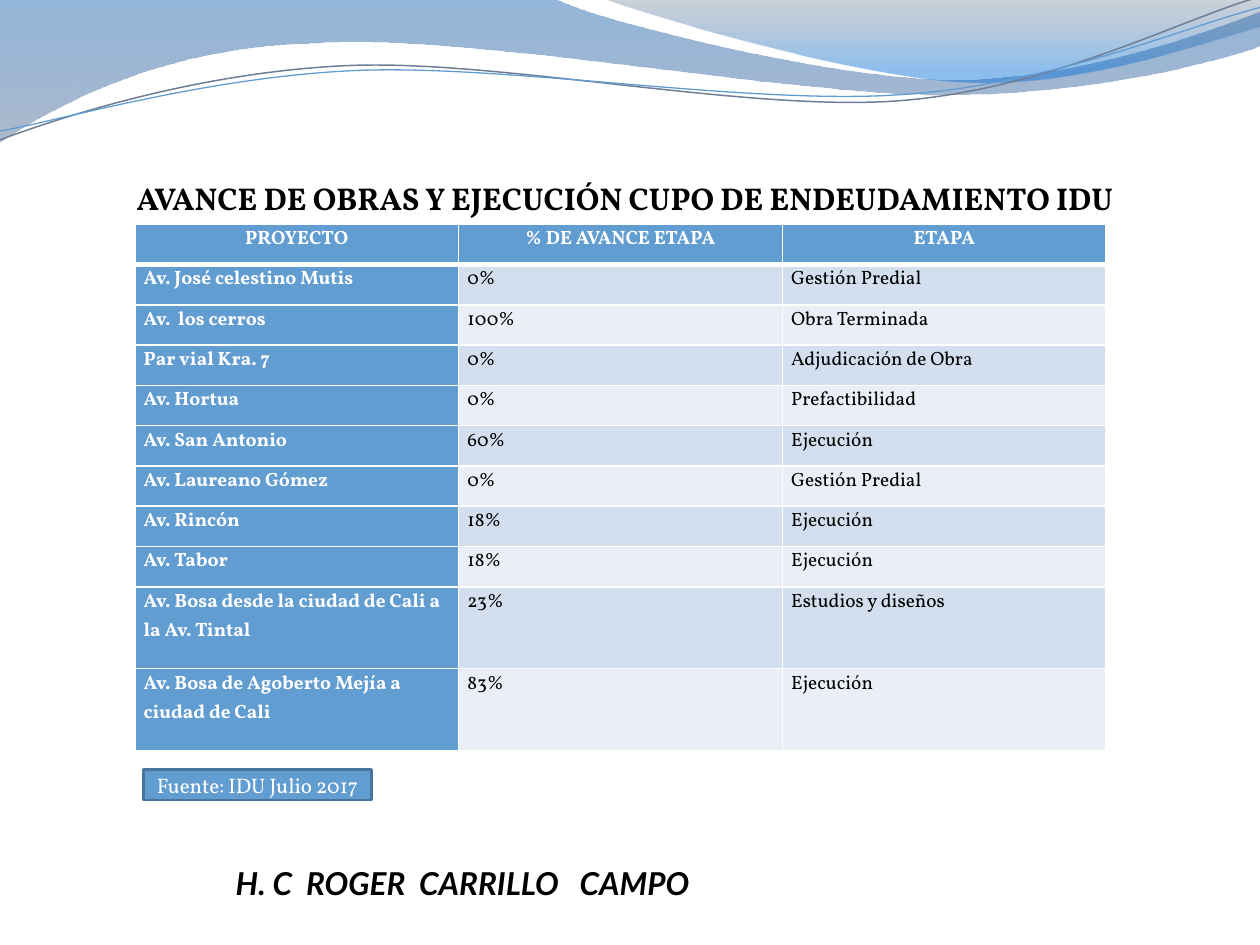
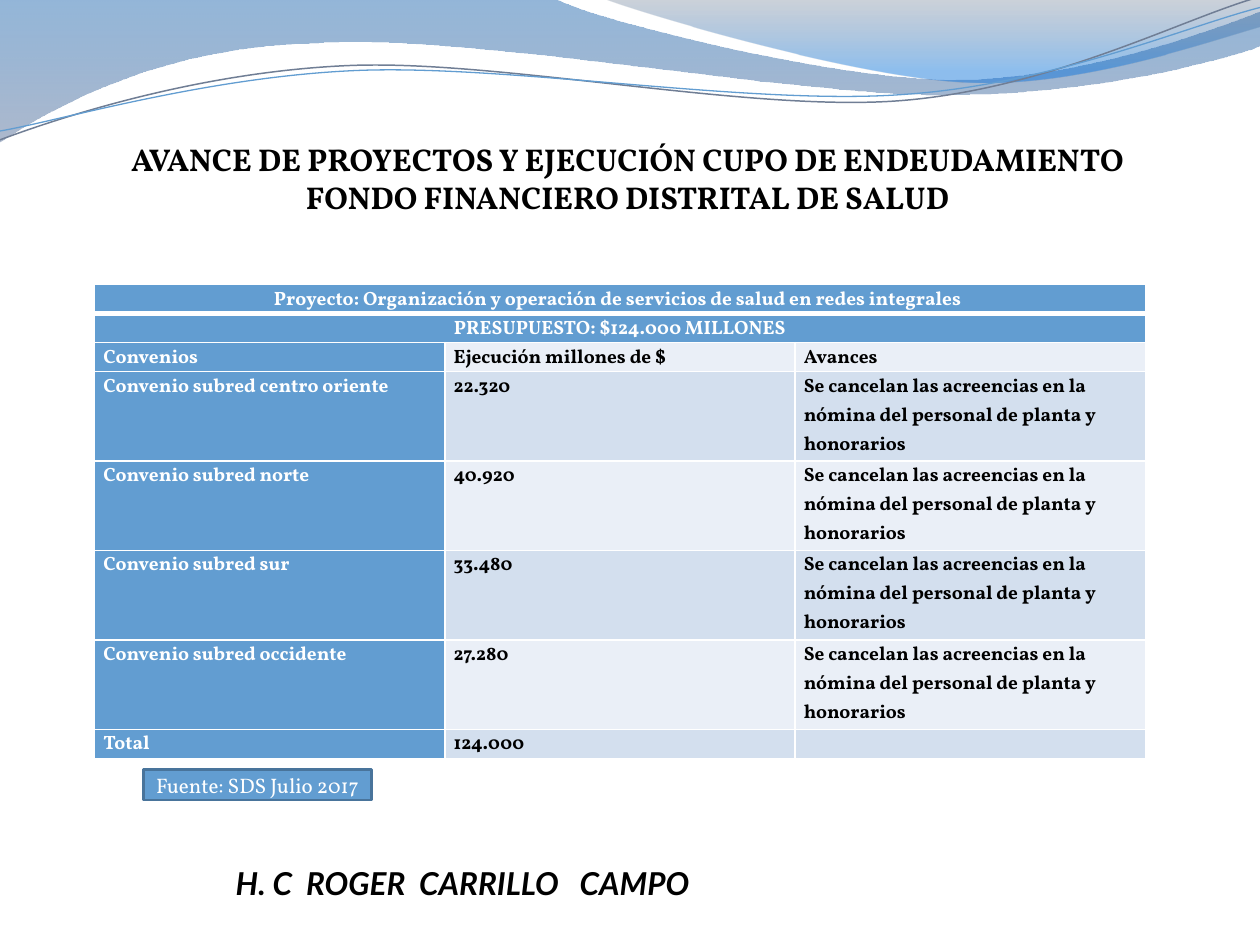
from dataclasses import dataclass
from math import cos, radians, sin

from lxml.etree import SubElement
from pptx import Presentation
from pptx.dml.color import RGBColor
from pptx.enum.shapes import MSO_SHAPE
from pptx.enum.text import MSO_ANCHOR, MSO_AUTO_SIZE, PP_ALIGN
from pptx.oxml.ns import qn
from pptx.util import Inches, Pt

COLORS = {
    "white": "FFFFFF",
    "black": "000000",
    "accent": "629DD1",
    "accent_dark": "49749B",
    "band_odd": "D3DFEE",
    "band_even": "EAEFF7",
    "wave_deep": "125EAA",
    "wave_grey": "697FA4",
    "crest_slate": "596982",
    "crest_blue": "0670DA",
    "thread_grey": "707E95",
}
SERIF = "Vollkorn"
SANS = "Lato"
AUTHOR = " H. C  ROGER  CARRILLO   CAMPO"
PAYMENT = "Se cancelan las acreencias en la nómina del personal de planta y honorarios"


@dataclass(frozen=True)
class Stop:
    position: float
    color: str
    alpha: int


@dataclass(frozen=True)
class Wave:
    start: tuple
    segments: list
    stops: tuple = ()
    line: str = ""
    width: float = 0
    tilt: float = 0
    pivot: tuple = (0, 0)


@dataclass(frozen=True)
class Report:
    title: str
    title_box: tuple
    table_place: tuple
    column_width: float
    row_heights: list
    rows: list
    source: str
    banner_rows: int = 0
    bold_body: bool = False


WAVES = [
    Wave(
        (0, 0),
        [(4.4, -0.01), (4.76, 0.17, 6.64, 0.63, 7.58, 0.63),
         (8.53, 0.63, 9.58, 0.26, 10, 0.09), (10.01, 0.36),
         (9.83, 0.44, 8.7, 0.76, 7.46, 0.75),
         (6.22, 0.75, 3.82, 0.28, 2.57, 0.34),
         (1.29, 0.36, 0.46, 0.83, -0.01, 1.13), (0, 0)],
        stops=(Stop(0, "wave_deep", 45), Stop(1, "wave_grey", 55)),
    ),
    Wave(
        (4.79, -0.01),
        [(5.09, 0.11, 6.82, 0.62, 7.69, 0.65),
         (8.56, 0.69, 9.61, 0.32, 10, 0.21), (10, 0), (4.79, -0.01)],
        stops=(Stop(0, "crest_slate", 30), Stop(0.8, "crest_blue", 45)),
    ),
    Wave(
        (0, 1.11),
        [(0.48, 0.93, 1.58, 0.57, 2.77, 0.52),
         (3.95, 0.47, 5.93, 0.89, 7.13, 0.8),
         (8.33, 0.71, 9.38, 0.15, 9.98, -0.02)],
        line="thread_grey", width=0.85, tilt=-2.7, pivot=(4.99, 0.58),
    ),
    Wave(
        (0, 1.04),
        [(0.47, 0.96, 1.64, 0.61, 2.83, 0.56),
         (4.03, 0.51, 5.97, 0.84, 7.17, 0.75),
         (8.36, 0.67, 9.41, 0.21, 10, 0.06)],
        line="accent", width=0.75, tilt=-2.7, pivot=(5, 0.59),
    ),
]

REPORTS = [
    Report(
        title="AVANCE DE OBRAS Y EJECUCIÓN CUPO DE ENDEUDAMIENTO IDU",
        title_box=(0.43, 1.37, 9.06, 0.41),
        table_place=(1.07, 1.78),
        column_width=2.57,
        row_heights=[0.32] * 9 + [0.65] * 2,
        rows=[
            ("PROYECTO", "% DE AVANCE ETAPA", "ETAPA"),
            ("Av. José celestino Mutis", "0%", "Gestión Predial"),
            ("Av.  los cerros", "100%", "Obra Terminada"),
            ("Par vial Kra. 7", "0%", "Adjudicación de Obra"),
            ("Av. Hortua", "0%", "Prefactibilidad"),
            ("Av. San Antonio", "60%", "Ejecución"),
            ("Av. Laureano Gómez", "0%", "Gestión Predial"),
            ("Av. Rincón", "18%", "Ejecución"),
            ("Av. Tabor", "18%", "Ejecución"),
            ("Av. Bosa desde la ciudad de Cali a la Av. Tintal", "23%", "Estudios y diseños"),
            ("Av. Bosa de Agoberto Mejía a ciudad de Cali", "83%", "Ejecución"),
        ],
        source="Fuente: IDU Julio 2017",
    ),
    Report(
        title="AVANCE DE PROYECTOS Y EJECUCIÓN CUPO DE ENDEUDAMIENTO "
              "FONDO FINANCIERO DISTRITAL DE SALUD",
        title_box=(0.57, 1.06, 8.82, 0.71),
        table_place=(0.75, 2.26),
        column_width=2.78,
        row_heights=[0.23] * 3 + [0.71] * 4 + [0.23],
        rows=[
            ("Proyecto: Organización y operación de servicios de salud en redes integrales ", "", ""),
            ("PRESUPUESTO: $124.000 MILLONES", "", ""),
            ("Convenios", "Ejecución millones de $", "Avances"),
            ("Convenio subred centro oriente", "22.320", PAYMENT),
            ("Convenio subred norte", "40.920", PAYMENT),
            ("Convenio subred sur", "33.480", PAYMENT),
            ("Convenio subred occidente", "27.280", PAYMENT),
            ("Total", "124.000", ""),
        ],
        source="Fuente: SDS Julio 2017",
        banner_rows=2,
        bold_body=True,
    ),
]


def rgb(name: str) -> RGBColor:
    return RGBColor.from_string(COLORS[name])


def box(lengths: tuple) -> list:
    return [Inches(length) for length in lengths]


def write(frame, text: str, *, size: float, font: str = SERIF, color: str = "black",
          bold: bool = False, italic: bool = False, align=PP_ALIGN.CENTER,
          spacing: float = 1.0) -> None:
    paragraph = frame.paragraphs[0]
    paragraph.alignment = align
    paragraph.line_spacing = spacing
    if not text:
        SubElement(paragraph._p, qn("a:endParaRPr"), sz=str(int(size * 100)))
        return
    run = paragraph.add_run()
    run.text = text
    run.font.size = Pt(size)
    run.font.name = font
    run.font.bold = bold
    run.font.italic = italic
    run.font.color.rgb = rgb(color)


def level(point: tuple, wave: Wave) -> list:
    angle = radians(-wave.tilt)
    x, y = point[0] - wave.pivot[0], point[1] - wave.pivot[1]
    return box((wave.pivot[0] + x * cos(angle) - y * sin(angle),
                wave.pivot[1] + x * sin(angle) + y * cos(angle)))


def bend(shape, segments: list) -> None:
    steps = iter(list(shape.element.iter(qn("a:lnTo"))))
    for segment in segments:
        curve = next(steps)
        if len(segment) == 6:
            curve.tag = qn("a:cubicBezTo")
            for step in (next(steps), next(steps)):
                curve.append(step[0])
                step.getparent().remove(step)


def draw_wave(slide, wave: Wave) -> None:
    points = [segment[i:i + 2] for segment in wave.segments for i in range(0, len(segment), 2)]
    builder = slide.shapes.build_freeform(*level(wave.start, wave))
    builder.add_line_segments([level(point, wave) for point in points], close=bool(wave.stops))
    shape = builder.convert_to_shape()
    bend(shape, wave.segments)
    shape.rotation = wave.tilt
    shape.shadow.inherit = False
    if not wave.stops:
        shape.fill.background()
        shape.line.color.rgb = rgb(wave.line)
        shape.line.width = Pt(wave.width)
        return
    shape.line.fill.background()
    shape.fill.gradient()
    shape.fill.gradient_angle = 270
    for gradient_stop, stop in zip(shape.fill.gradient_stops, wave.stops):
        gradient_stop.position = stop.position
        gradient_stop.color.rgb = rgb(stop.color)
    for color, stop in zip(shape.element.iter(qn("a:srgbClr")), wave.stops):
        SubElement(color, qn("a:alpha"), val=str(stop.alpha * 1000))


def draw_borders(cell, row: int) -> None:
    properties = cell._tc.get_or_add_tcPr()
    widths = {"L": 1, "R": 1, "T": 3 if row == 1 else 1, "B": 3 if row == 0 else 1}
    for side, width in widths.items():
        line = SubElement(properties, qn(f"a:ln{side}"), w=str(Pt(width)))
        SubElement(SubElement(line, qn("a:solidFill")), qn("a:srgbClr"), val=COLORS["white"])


def draw_table(slide, report: Report) -> None:
    columns = len(report.rows[0])
    extent = (report.column_width * columns, sum(report.row_heights))
    table = slide.shapes.add_table(
        len(report.rows), columns, *box(report.table_place + extent)).table
    for r, values in enumerate(report.rows):
        table.rows[r].height = Inches(report.row_heights[r])
        heading = r < max(1, report.banner_rows)
        for c, value in enumerate(values):
            cell = table.cell(r, c)
            cell.margin_left = cell.margin_right = Inches(0.07)
            cell.margin_top = cell.margin_bottom = 0
            draw_borders(cell, r)
            strong = heading or c == 0
            cell.fill.solid()
            cell.fill.fore_color.rgb = rgb(
                "accent" if strong else "band_odd" if r % 2 else "band_even")
            write(cell.text_frame, value, size=11, spacing=1.07,
                  color="white" if strong else "black",
                  bold=strong or report.bold_body,
                  align=PP_ALIGN.CENTER if heading else PP_ALIGN.LEFT)
        if r < report.banner_rows:
            table.cell(r, 0).merge(table.cell(r, columns - 1))


def draw_title(slide, report: Report) -> None:
    title = slide.shapes.title
    title.left, title.top, title.width, title.height = box(report.title_box)
    title.text_frame.word_wrap = True
    title.text_frame.auto_size = MSO_AUTO_SIZE.NONE
    title.text_frame.vertical_anchor = MSO_ANCHOR.TOP
    write(title.text_frame, report.title, size=18, bold=True)


def draw_source(slide, text: str) -> None:
    label = slide.shapes.add_shape(MSO_SHAPE.RECTANGLE, *box((1.14, 6.11, 1.81, 0.24)))
    label.shadow.inherit = False
    label.fill.solid()
    label.fill.fore_color.rgb = rgb("accent")
    label.line.color.rgb = rgb("accent_dark")
    label.line.width = Pt(1.5)
    label.text_frame.vertical_anchor = MSO_ANCHOR.MIDDLE
    write(label.text_frame, text, size=12, color="white")


def draw_author(slide) -> None:
    author = slide.shapes.add_textbox(*box((1.46, 6.81, 4.37, 0.41)))
    author.text_frame.word_wrap = True
    write(author.text_frame, AUTHOR, size=18, font=SANS, bold=True, italic=True)


def main() -> None:
    deck = Presentation()
    deck.slide_width, deck.slide_height = box((10, 7.5))
    for report in REPORTS:
        slide = deck.slides.add_slide(deck.slide_layouts[5])
        for wave in WAVES:
            draw_wave(slide, wave)
        draw_author(slide)
        draw_title(slide, report)
        draw_table(slide, report)
        draw_source(slide, report.source)
    deck.save("out.pptx")


if __name__ == "__main__":
    main()
